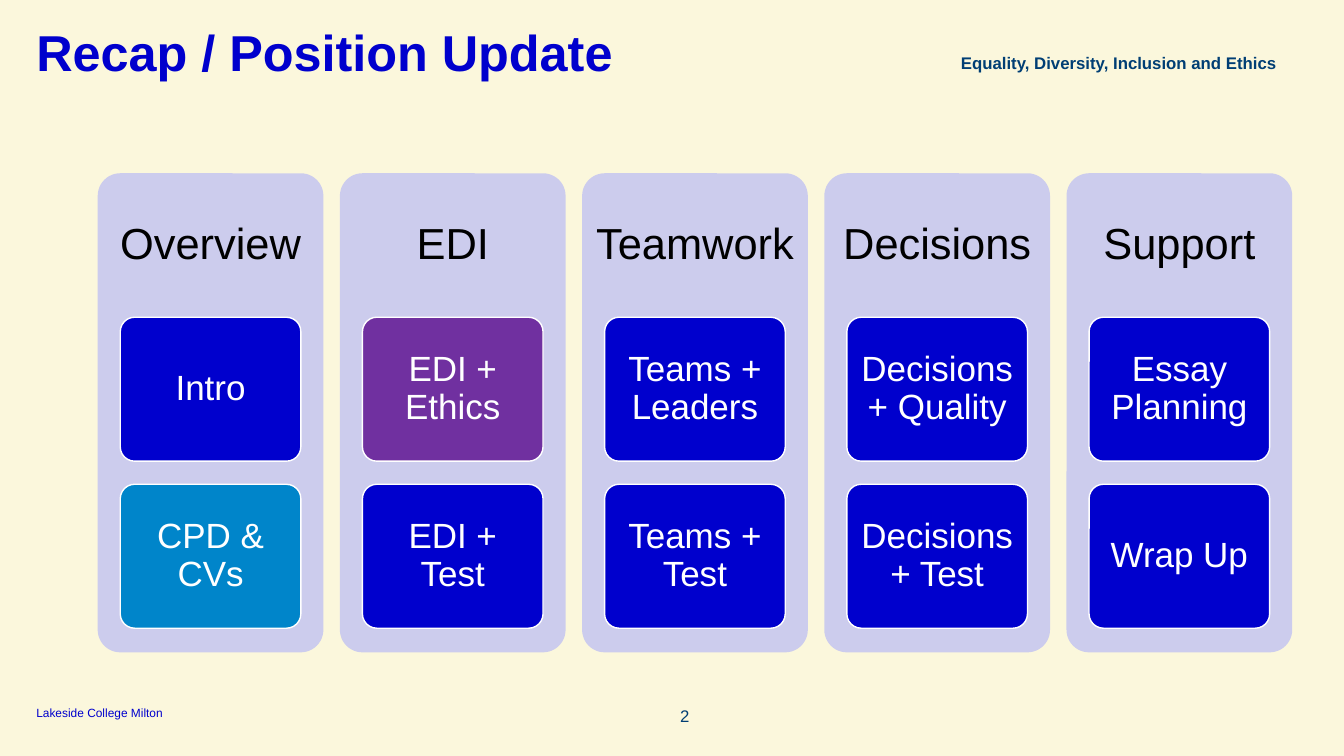
import pptx
import pptx.dml.color
import pptx.enum.shapes
import pptx.enum.text
import pptx.oxml
import pptx.util

Pt = pptx.util.Pt
RGBColor = pptx.dml.color.RGBColor
ALIGN = pptx.enum.text.PP_ALIGN
ANCHOR = pptx.enum.text.MSO_ANCHOR

CREAM = RGBColor(0xFB, 0xF7, 0xDC)
BLUE = RGBColor(0x00, 0x00, 0xCD)
LAVENDER = RGBColor(0xCC, 0xCC, 0xED)
PURPLE = RGBColor(0x70, 0x30, 0xA0)
SKY = RGBColor(0x00, 0x85, 0xCA)
NAVY = RGBColor(0x00, 0x3E, 0x74)
WHITE = RGBColor(0xFF, 0xFF, 0xFF)
BLACK = RGBColor(0x00, 0x00, 0x00)

TOPICS = [
    ("Overview", [("Intro", BLUE), ("CPD & CVs", SKY)]),
    ("EDI", [("EDI + Ethics", PURPLE), ("EDI + Test", BLUE)]),
    ("Teamwork", [("Teams + Leaders", BLUE), ("Teams + Test", BLUE)]),
    ("Decisions", [("Decisions + Quality", BLUE), ("Decisions + Test", BLUE)]),
    ("Support", [("Essay Planning", BLUE), ("Wrap Up", BLUE)]),
]
COLUMN_LEFT, COLUMN_TOP, COLUMN_WIDTH, COLUMN_HEIGHT = 69.8, 123.8, 161.2, 342.2
COLUMN_PITCH = 173
HEADING_HEIGHT = 102.7
SESSION_INSET, SESSION_TOP, SESSION_WIDTH, SESSION_HEIGHT = 16.1, 226.6, 129, 102.8
SESSION_PITCH = 119.3


class SlideBuilder:
    font_name = "Arial"

    def __init__(self, slide):
        self.slide = slide
        slide.background.fill.solid()
        slide.background.fill.fore_color.rgb = CREAM

    def set_text(self, shape, text, size, color, bold=False, align=ALIGN.LEFT,
                 anchor=ANCHOR.TOP, spacing=1.0, margins=(0, 0)):
        frame = shape.text_frame
        frame.text = text
        frame.word_wrap = True
        frame.auto_size = pptx.enum.text.MSO_AUTO_SIZE.NONE
        frame.vertical_anchor = anchor
        frame.margin_left = frame.margin_right = Pt(margins[0])
        frame.margin_top = frame.margin_bottom = Pt(margins[1])
        paragraph = frame.paragraphs[0]
        paragraph.alignment = align
        paragraph.line_spacing = spacing
        paragraph.space_before = Pt(0)
        font = paragraph.runs[0].font
        font.name = self.font_name
        font.size = Pt(size)
        font.bold = bold
        font.color.rgb = color
        return paragraph

    def placeholder(self, index, left, top, width, height, text, size, color, **style):
        shape = self.slide.placeholders[index]
        shape.left, shape.top = Pt(left), Pt(top)
        shape.width, shape.height = Pt(width), Pt(height)
        return self.set_text(shape, text, size, color, **style)

    def plain_body(self, *args, **style):
        properties = self.placeholder(1, *args, **style)._p.get_or_add_pPr()
        properties.set("marL", "0")
        properties.set("indent", "0")
        properties.append(pptx.oxml.parse_xml(
            '<a:buNone xmlns:a="http://schemas.openxmlformats.org/drawingml/2006/main"/>'))

    def label(self, left, top, width, height, text, size, color, **style):
        shape = self.slide.shapes.add_textbox(Pt(left), Pt(top), Pt(width), Pt(height))
        self.set_text(shape, text, size, color, **style)

    def panel(self, left, top, width, height, fill, outline=None):
        shape = self.slide.shapes.add_shape(
            pptx.enum.shapes.MSO_SHAPE.ROUNDED_RECTANGLE,
            Pt(left), Pt(top), Pt(width), Pt(height))
        shape.adjustments[0] = 0.1
        shape.shadow.inherit = False
        shape.fill.solid()
        shape.fill.fore_color.rgb = fill
        if outline is None:
            shape.line.fill.background()
        else:
            shape.line.color.rgb = outline
            shape.line.width = Pt(1)
        return shape

    def topic(self, left, heading, sessions):
        centred = {"align": ALIGN.CENTER, "anchor": ANCHOR.MIDDLE, "spacing": 0.9}
        self.panel(left, COLUMN_TOP, COLUMN_WIDTH, COLUMN_HEIGHT, LAVENDER)
        self.label(left, COLUMN_TOP, COLUMN_WIDTH, HEADING_HEIGHT, heading, 31, BLACK,
                   margins=(9, 9), **centred)
        for row, (text, fill) in enumerate(sessions):
            box = self.panel(left + SESSION_INSET, SESSION_TOP + row * SESSION_PITCH,
                             SESSION_WIDTH, SESSION_HEIGHT, fill, WHITE)
            self.set_text(box, text, 25, WHITE, margins=(5, 4), **centred)


def main():
    presentation = pptx.Presentation()
    presentation.slide_width, presentation.slide_height = Pt(960), Pt(540)
    builder = SlideBuilder(presentation.slides.add_slide(presentation.slide_layouts[1]))

    builder.placeholder(0, 25.9, 20.2, 908.6, 29.5, "Recap / Position Update", 36, BLUE,
                        bold=True, spacing=0.9)
    builder.plain_body(666, 36.7, 246, 24.5, "Equality, Diversity, Inclusion and Ethics",
                       12, NAVY, bold=True, align=ALIGN.RIGHT, spacing=1.05)
    for column, (heading, sessions) in enumerate(TOPICS):
        builder.topic(COLUMN_LEFT + column * COLUMN_PITCH, heading, sessions)
    builder.label(25.9, 503.3, 111.6, 10.8, "Lakeside College Milton", 8.5, BLUE,
                  anchor=ANCHOR.BOTTOM)
    builder.label(467.3, 503.3, 25.2, 10.8, "2", 12, NAVY, align=ALIGN.RIGHT, spacing=1.05)

    presentation.save("out.pptx")


if __name__ == "__main__":
    main()
